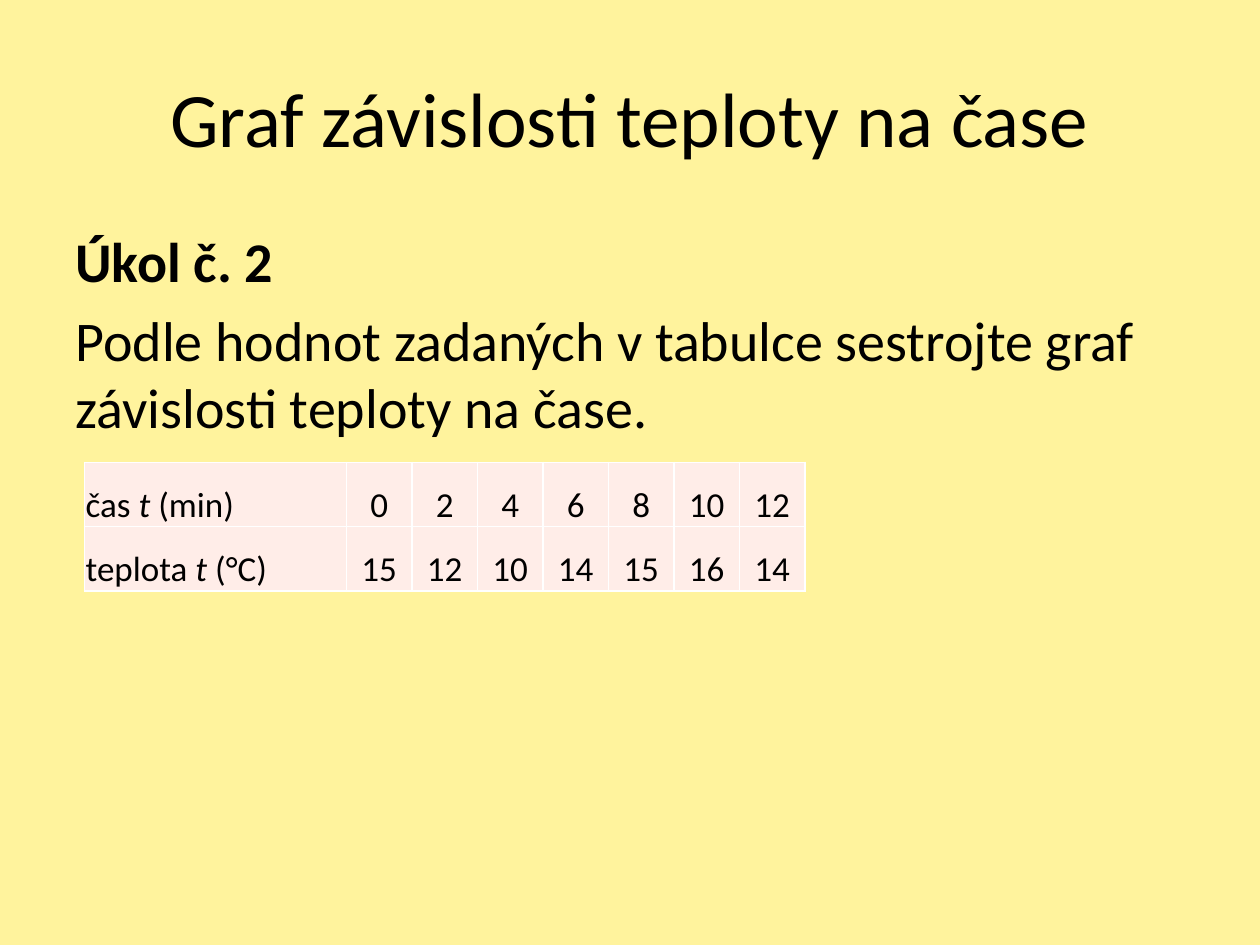
from lxml import etree
from pptx import Presentation
from pptx.dml.color import RGBColor
from pptx.enum.text import MSO_ANCHOR as Anchor, PP_ALIGN as Align
from pptx.oxml import parse_xml
from pptx.oxml.ns import nsdecls
from pptx.util import Inches, Pt

COLORS = {"background": "FFF39D", "text": "000000", "cell": "FFEDE8", "border": "FFFFFF"}
FONT = "Calibri"


def add_run(p, text, size, bold=False, italic=False):
    r = p.add_run()
    r.text = text
    r.font.name, r.font.size = FONT, Pt(size)
    r.font.bold, r.font.italic = bold, italic
    r.font.color.rgb = RGBColor.from_string(COLORS["text"])


def add_borders(cell):
    """Draw a 1 pt line on all four sides; the lines must precede the cell's fill."""
    tc_pr = cell._tc.get_or_add_tcPr()
    for i, side in enumerate("LRTB"):
        tc_pr.insert(i, parse_xml(
            f'<a:ln{side} {nsdecls("a")} w="{Pt(1)}"><a:solidFill>'
            f'<a:srgbClr val="{COLORS["border"]}"/></a:solidFill></a:ln{side}>'))


prs = Presentation()
prs.slide_width, prs.slide_height = Inches(10), Inches(7.5)
s = prs.slides.add_slide(prs.slide_layouts[6])
s.background.fill.solid()
s.background.fill.fore_color.rgb = RGBColor.from_string(COLORS["background"])

margin = prs.slide_width * 0.05
content_width = prs.slide_width - 2 * margin

# Title
title = s.shapes.add_textbox(int(margin), Inches(0.3), int(content_width), Inches(1.25))
tf = title.text_frame
tf.word_wrap = True
tf.vertical_anchor = Anchor.MIDDLE
p = tf.paragraphs[0]
p.alignment = Align.CENTER
add_run(p, "Graf závislosti teploty na čase", 44)

# Task
task = s.shapes.add_textbox(int(margin), Inches(1.75), int(content_width), Inches(4.95))
tf = task.text_frame
tf.word_wrap = True
task_lines = [
    ("Úkol č. 2", True),
    ("Podle hodnot zadaných v tabulce sestrojte graf závislosti teploty na čase.", False),
]
for i, (text, bold) in enumerate(task_lines):
    p = tf.add_paragraph() if i else tf.paragraphs[0]
    p.space_before = Pt(6.4)
    add_run(p, text, 32, bold=bold)

# Table of measured values: quantity, unit, values
measurements = [
    ("čas ", " (min)", [0, 2, 4, 6, 8, 10, 12]),
    ("teplota ", " (°C)", [15, 12, 10, 14, 15, 16, 14]),
]
label_width, value_width, row_height = 2.08, 0.52, 0.51
value_count = len(measurements[0][2])
table = s.shapes.add_table(
    len(measurements), 1 + value_count, Inches(0.67), Inches(3.67),
    Inches(label_width + value_count * value_width),
    Inches(len(measurements) * row_height)).table
table.first_row = table.horz_banding = False
for i, column in enumerate(table.columns):
    column.width = Inches(value_width if i else label_width)

for row, (quantity, unit, values) in zip(table.rows, measurements):
    row.height = Inches(row_height)
    for i, cell in enumerate(row.cells):
        cell.margin_left = cell.margin_right = cell.margin_top = Inches(0.01)
        cell.margin_bottom = 0
        cell.vertical_anchor = Anchor.BOTTOM
        cell.fill.solid()
        cell.fill.fore_color.rgb = RGBColor.from_string(COLORS["cell"])
        add_borders(cell)
        p = cell.text_frame.paragraphs[0]
        if i:
            p.alignment = Align.CENTER
            add_run(p, str(values[i - 1]), 20)
        else:
            add_run(p, quantity, 20)
            add_run(p, "t", 20, italic=True)
            add_run(p, unit, 20)

prs.save("out.pptx")
